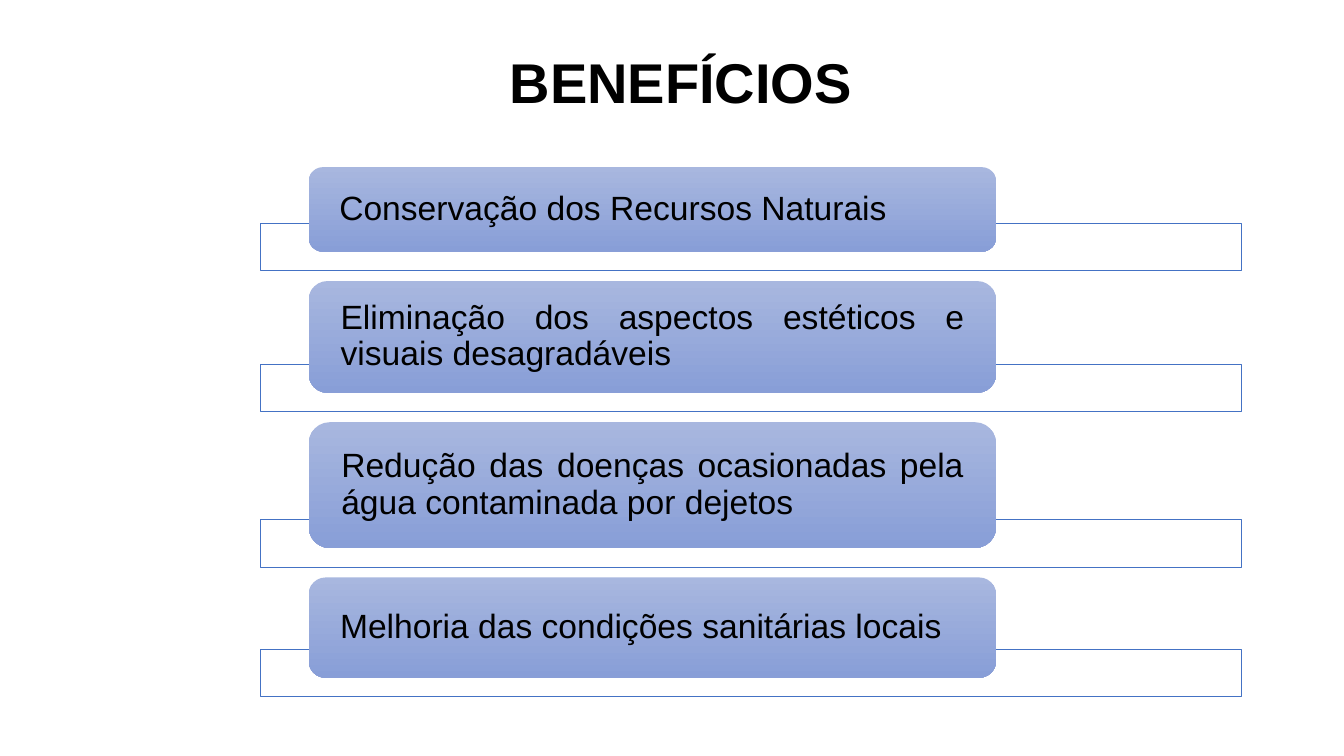
from lxml import etree
from pptx import Presentation
from pptx.dml.color import RGBColor
from pptx.enum.shapes import MSO_SHAPE
from pptx.enum.text import MSO_ANCHOR, PP_ALIGN
from pptx.oxml.ns import qn
from pptx.util import Pt

RECT, ROUND = MSO_SHAPE.RECTANGLE, MSO_SHAPE.ROUNDED_RECTANGLE
CENTER, JUSTIFY = PP_ALIGN.CENTER, PP_ALIGN.JUSTIFY
MIDDLE, BOTTOM = MSO_ANCHOR.MIDDLE, MSO_ANCHOR.BOTTOM

COLORS = {"ink": "000000", "paper": "FFFFFF", "edge": "4472C4",
          "light": "A8B7DF", "dark": "889ED7"}
TITLE = {"size": Pt(40), "bold": True}
LABEL = {"size": Pt(24), "bold": False}
BENEFITS = [
    ("Conservação dos Recursos Naturais", 60.3),
    ("Eliminação dos aspectos estéticos e visuais desagradáveis", 79.7),
    ("Redução das doenças ocasionadas pela água contaminada por dejetos", 89.8),
    ("Melhoria das condições sanitárias locais", 71.6),
]
TOP, GAP, LAP = 119.4, 21.1, 20.1


class Deck:
    font = "Arial"

    def __init__(self, slide):
        self.slide = slide

    def color(self, name):
        return RGBColor.from_string(COLORS[name])

    def label(self, shape, text, style, align, anchor, insets):
        frame = shape.text_frame
        frame.word_wrap = True
        frame.vertical_anchor = anchor
        for side, inset in zip(("left", "top", "right", "bottom"), insets):
            setattr(frame, f"margin_{side}", Pt(inset))
        para = frame.paragraphs[0]
        para.alignment = align
        para.line_spacing = 0.9
        run = para.add_run()
        run.text = text
        for key, value in {"name": self.font, **style}.items():
            setattr(run.font, key, value)
        run.font.color.rgb = self.color("ink")

    def shape(self, kind, box):
        shape = self.slide.shapes.add_shape(kind, *map(Pt, box))
        shape.shadow.inherit = False
        return shape

    def title(self, text, box):
        shape = self.slide.shapes.add_textbox(*map(Pt, box))
        self.label(shape, text, TITLE, CENTER, BOTTOM, (7.2, 3.6, 7.2, 7.2))

    def bar(self, box):
        shape = self.shape(RECT, box)
        shape.fill.solid()
        shape.fill.fore_color.rgb = self.color("paper")
        tint = shape.element.spPr.find(qn("a:solidFill"))[0]
        etree.SubElement(tint, qn("a:alpha"), val="90000")
        shape.line.color.rgb = self.color("edge")
        shape.line.width = Pt(0.5)

    def pill(self, text, box):
        shape = self.shape(ROUND, box)
        shape.fill.gradient()
        shape.fill.gradient_angle = 270
        for stop, name in zip(shape.fill.gradient_stops, ("light", "dark")):
            stop.color.rgb = self.color(name)
        shape.line.fill.background()
        self.label(shape, text, LABEL, JUSTIFY, MIDDLE, (18.9, 0, 18.9, 0))


def main():
    show = Presentation()
    show.slide_width, show.slide_height = Pt(960), Pt(540)
    deck = Deck(show.slides.add_slide(show.slide_layouts[6]))
    deck.title("BENEFÍCIOS ", (185.8, 0, 612, 90))
    top = TOP
    for text, height in BENEFITS:
        end = top + height
        deck.bar((185.8, end - LAP, 701.3, 33.8))
        deck.pill(text, (220.5, top, 491, height))
        top = end + GAP
    show.save("out.pptx")


if __name__ == "__main__":
    main()
